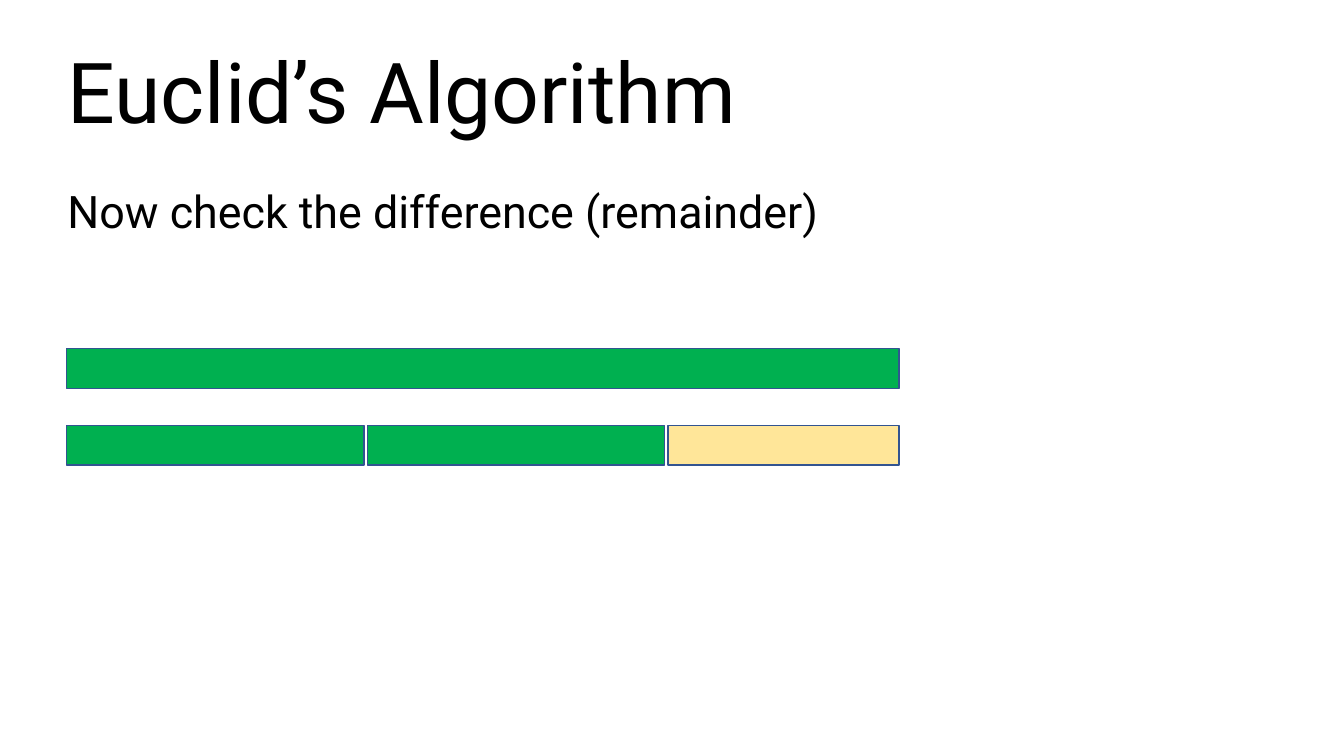
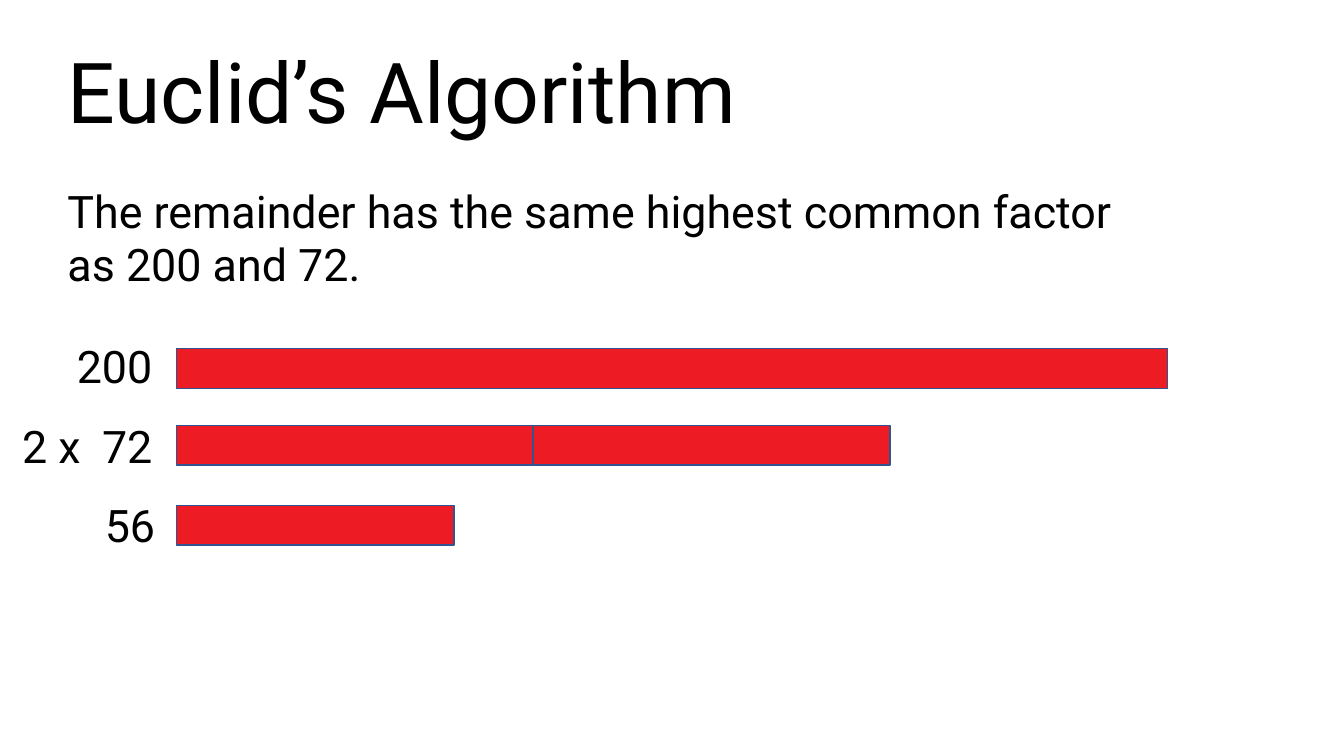
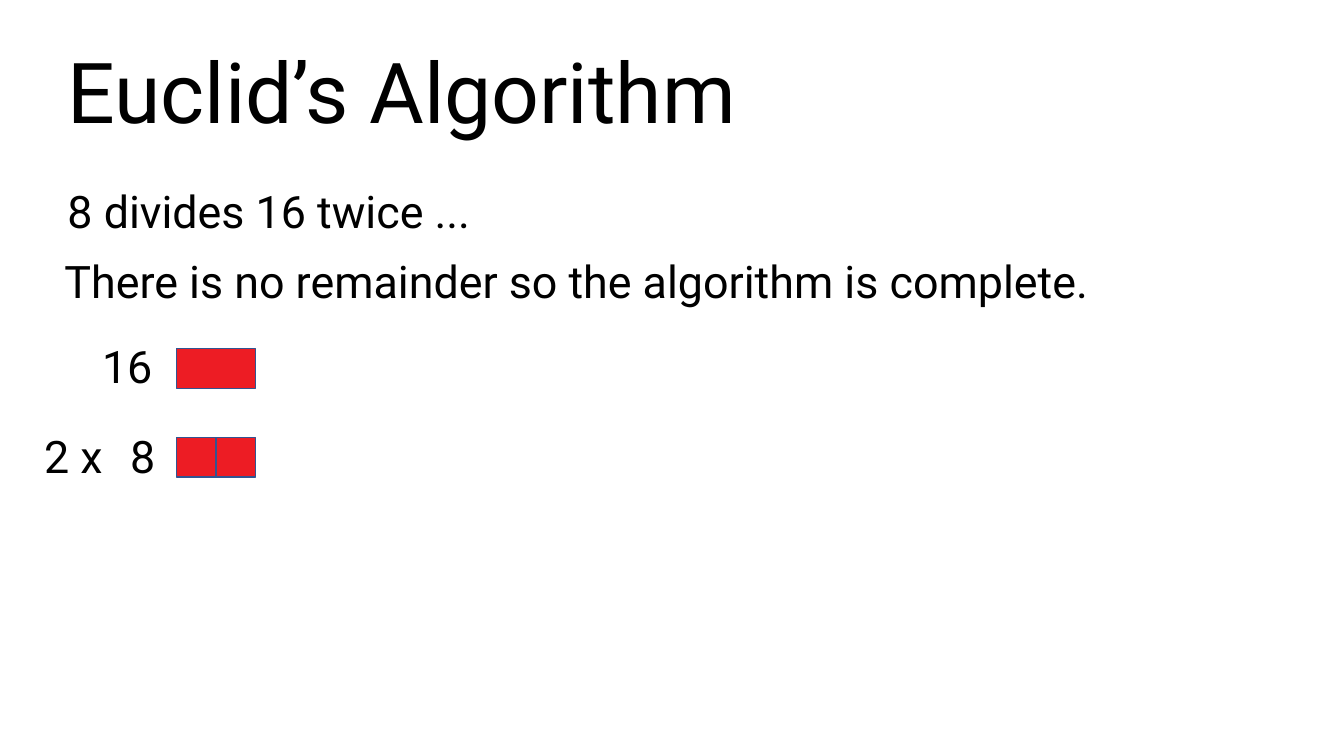
"""Builds three slides on Euclid's algorithm with bars drawn to scale."""
from pptx import Presentation
from pptx.dml.color import RGBColor as RGB
from pptx.enum.shapes import MSO_SHAPE as SHAPE
from pptx.enum.text import MSO_ANCHOR as ANCHOR, MSO_AUTO_SIZE as FIT, PP_ALIGN as ALIGN
from pptx.oxml.ns import qn
from pptx.util import Pt

BLACK = RGB(0x00, 0x00, 0x00)
GREEN = RGB(0x00, 0xB0, 0x50)
CREAM = RGB(0xFF, 0xE6, 0x99)
RED = RGB(0xED, 0x1C, 0x24)
EDGE = RGB(0x32, 0x54, 0x91)

FONT = "Roboto"
TITLE = "Euclid’s Algorithm"
UNIT = 3.54
THICK = 28.35
LINE = 46
WIDE = 873.4
TAG = 77

SLIDES = [
    dict(
        body="Now check the difference (remainder)", size=(WIDE, LINE),
        left=47.5, gap=2.5,
        rows=[(249, [(168, GREEN)]),
              (304, [(60, GREEN), (60, GREEN), (46.6, CREAM)])],
    ),
    dict(
        body="The remainder has the same highest common factor as 200 and 72.",
        size=(794.2, 85), left=126, gap=0,
        rows=[(249, [(200, RED)]),
              (304, [(72, RED), (72, RED)]),
              (361, [(56, RED)])],
        tags=[("200", 39, 238.4), ("72", 39, 295.2), ("2 x ", -4.3, 295.2),
              ("56", 41, 352)],
    ),
    dict(
        body="8 divides 16 twice ...", size=(WIDE, LINE), left=126, gap=0,
        note="There is no remainder so the algorithm is complete.",
        rows=[(249, [(16, RED)]),
              (312.5, [(8, RED), (8, RED)])],
        tags=[("16", 39, 238.4), ("8", 41, 302.4), ("2 x ", 11.5, 302.4)],
    ),
]


def write(shape, text, at, size=32, align=ALIGN.LEFT):
    """Place a text shape and fill it with one formatted paragraph."""
    shape.left, shape.top, shape.width, shape.height = map(Pt, at)
    frame = shape.text_frame
    frame.text = text
    frame.word_wrap = True
    frame.auto_size = FIT.NONE
    frame.vertical_anchor = ANCHOR.TOP
    para = frame.paragraphs[0]
    props = para._p.get_or_add_pPr()
    props.set("marL", "0")
    props.set("indent", "0")
    props.append(props.makeelement(qn("a:buNone"), {}))
    para.alignment = align
    para.space_before = Pt(0)
    font = para.runs[0].font
    font.name, font.size, font.color.rgb = FONT, Pt(size), BLACK


def add_text(slide, text, at, **style):
    """Add a text box."""
    write(slide.shapes.add_textbox(0, 0, 0, 0), text, at, **style)


def add_row(slide, left, top, gap, parts):
    """Lay bars end to end, each as long as its value."""
    for value, fill in parts:
        width = value * UNIT
        bar = slide.shapes.add_shape(
            SHAPE.RECTANGLE, Pt(left), Pt(top), Pt(width), Pt(THICK))
        bar.shadow.inherit = False
        bar.fill.solid()
        bar.fill.fore_color.rgb = fill
        bar.line.color.rgb = EDGE
        bar.line.width = Pt(1)
        left += width + gap


def build(deck, data):
    """Add one slide."""
    slide = deck.slides.add_slide(deck.slide_layouts[1])
    write(slide.shapes.title, TITLE, (41, 24.5, 662.4, 80), size=60)
    write(slide.placeholders[1], data["body"], (41, 127.4, *data["size"]))
    for top, parts in data["rows"]:
        add_row(slide, data["left"], top, data["gap"], parts)
    for text, left, top in data.get("tags", []):
        add_text(slide, text, (left, top, TAG, LINE), align=ALIGN.RIGHT)
    if "note" in data:
        add_text(slide, data["note"], (39, 177.8, WIDE, LINE))


def main():
    """Build and save the deck."""
    deck = Presentation()
    deck.slide_width, deck.slide_height = Pt(960), Pt(540)
    for data in SLIDES:
        build(deck, data)
    deck.save("out.pptx")


if __name__ == "__main__":
    main()
